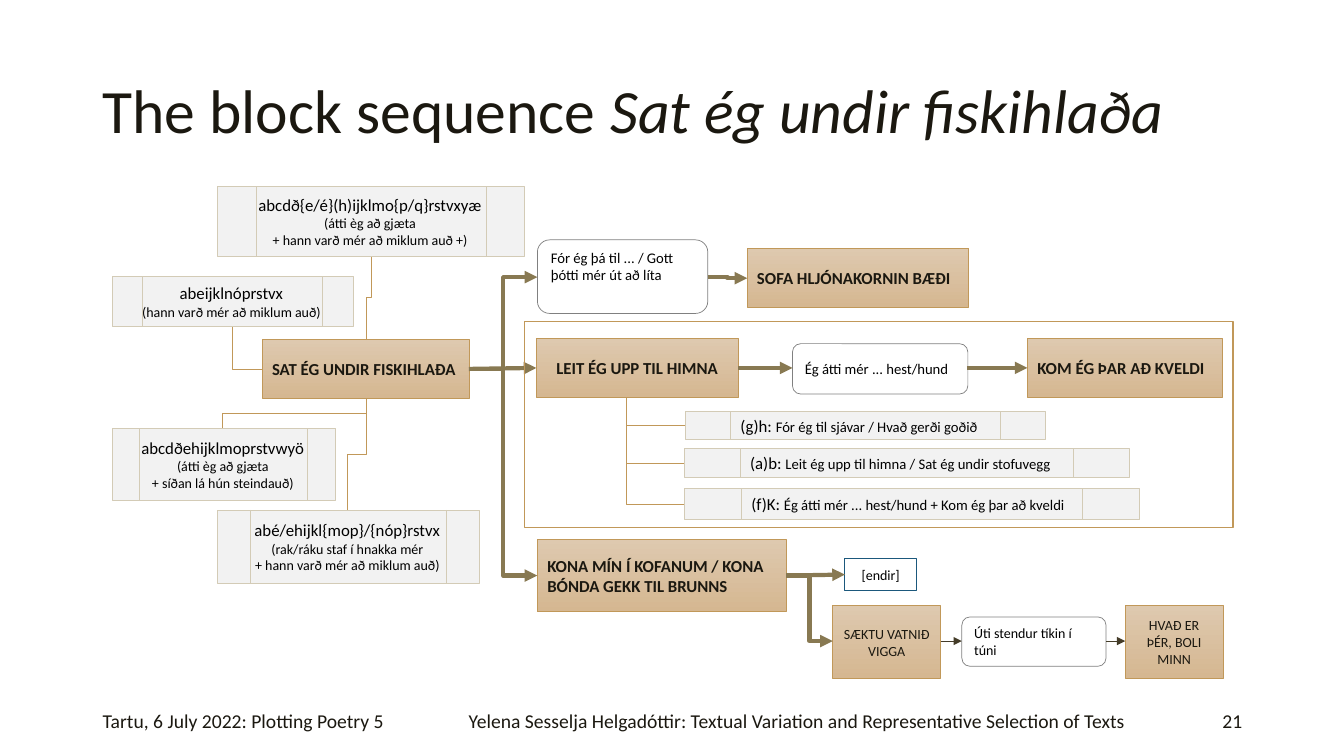
from lxml.etree import SubElement
from pptx import Presentation
from pptx.dml.color import RGBColor
from pptx.enum.shapes import MSO_CONNECTOR, MSO_SHAPE
from pptx.enum.text import MSO_ANCHOR, PP_ALIGN
from pptx.oxml.ns import qn
from pptx.util import Pt

PX = 9144  # 100 px to the inch
COLORS = {
    "ink": "1B1810", "black": "000000", "gold": "C19859", "arrow": "887952",
    "thin_arrow": "443C29", "sand": "D3CBB6", "grey": "808080", "pale": "F2F2F2",
    "blue": "1B587C", "block_top": "DEC9AF", "block_bottom": "D5B791",
}
LEFT, CENTER, RIGHT = PP_ALIGN.LEFT, PP_ALIGN.CENTER, PP_ALIGN.RIGHT
DEFAULT_MARGINS = (10, 5, 10, 5)


def color(name):
    return RGBColor.from_string(COLORS[name])


class Diagram:
    font_name = "Calibri"

    def __init__(self, slide):
        self.slide = slide

    def set_text(self, shape, paragraphs, ink="black", align=LEFT, bold=False,
                 anchor=MSO_ANCHOR.MIDDLE, margins=DEFAULT_MARGINS, spacing=None):
        """Each paragraph is a list of (text, size[, italic]) runs."""
        frame = shape.text_frame
        frame.word_wrap = True
        frame.vertical_anchor = anchor
        (frame.margin_left, frame.margin_top,
         frame.margin_right, frame.margin_bottom) = (m * PX for m in margins)
        for index, runs in enumerate(paragraphs):
            paragraph = frame.add_paragraph() if index else frame.paragraphs[0]
            paragraph.alignment = align
            if spacing:
                paragraph.line_spacing = spacing
            font = paragraph.font
            font.name, font.bold, font.size = self.font_name, bold, Pt(runs[0][1])
            font.color.rgb = color(ink)
            for text, size, *italic in runs:
                run = paragraph.add_run()
                run.text = text
                if size != runs[0][1]:
                    run.font.size = Pt(size)
                if italic:
                    run.font.italic = True

    def label(self, box, runs, **style):
        shape = self.slide.shapes.add_textbox(*(v * PX for v in box))
        self.set_text(shape, [runs], ink="ink", **style)

    def outline(self, kind, box, line, width=0.5):
        shape = self.slide.shapes.add_shape(kind, *(v * PX for v in box))
        shape.shadow.inherit = False
        shape.fill.background()
        shape.line.color.rgb = color(line)
        shape.line.width = Pt(width)
        return shape

    def block(self, box, text, size=12, bold=True, align=LEFT):
        shape = self.outline(MSO_SHAPE.RECTANGLE, box, "gold")
        shape.fill.gradient()
        shape.fill.gradient_angle = 270
        for stop, name in zip(shape.fill.gradient_stops, ("block_top", "block_bottom")):
            stop.color.rgb = color(name)
        self.set_text(shape, [[(text, size)]], ink="ink", bold=bold, align=align)

    def bridge(self, box, text, size=10.5, anchor=MSO_ANCHOR.MIDDLE):
        shape = self.outline(MSO_SHAPE.FLOWCHART_ALTERNATE_PROCESS, box, "grey")
        self.set_text(shape, [[(text, size)]], anchor=anchor)

    def variant(self, box, paragraphs, **style):
        shape = self.outline(MSO_SHAPE.FLOWCHART_PREDEFINED_PROCESS, box, "sand")
        shape.fill.solid()
        shape.fill.fore_color.rgb = color("pale")
        self.set_text(shape, paragraphs, **style)

    def connect(self, start, end, line="arrow", width=3, kind=MSO_CONNECTOR.STRAIGHT,
                arrow=True, bend=None):
        connector = self.slide.shapes.add_connector(
            kind, *(round(v * PX) for v in (*start, *end)))
        connector.line.color.rgb = color(line)
        connector.line.width = Pt(width)
        properties = connector._element.spPr
        if arrow:
            SubElement(properties.find(qn("a:ln")), qn("a:tailEnd"), type="triangle")
        if bend is not None:
            guides = properties.find(qn("a:prstGeom")).get_or_add_avLst()
            SubElement(guides, qn("a:gd"), name="adj1", fmla=f"val {bend}")
        SubElement(properties, qn("a:effectLst"))
        return connector

    def elbow(self, start, end):
        self.connect(start, end, kind=MSO_CONNECTOR.ELBOW, bend=50000)

    def corner(self, start, end):
        """Goes down first, then sideways."""
        self.connect(start, end, "gold", 0.5, MSO_CONNECTOR.ELBOW, False, 0)

    def drop(self, start, end):
        """Goes down, sideways and down again: an elbow turned by 90 degrees."""
        (x1, y1), (x2, y2) = start, end
        middle_x, middle_y = (x1 + x2) / 2, (y1 + y2) / 2
        half_width, half_height = (y2 - y1) / 2, (x1 - x2) / 2
        connector = self.connect(
            (middle_x - half_width, middle_y - half_height),
            (middle_x + half_width, middle_y + half_height),
            "gold", 0.5, MSO_CONNECTOR.ELBOW, False, 50000)
        connector._element.spPr.find(qn("a:xfrm")).set("rot", "5400000")


def main():
    presentation = Presentation()
    presentation.slide_width, presentation.slide_height = 1333 * PX, 750 * PX
    slide = presentation.slides.add_slide(presentation.slide_layouts[6])
    diagram = Diagram(slide)

    # Title and footer
    diagram.label((92, 40, 1150, 145), [("The block sequence ", 44),
                  ("Sat ég undir fiskihlaða", 44, True)], spacing=0.9)
    for left, width, text, align in (
            (92, 315, "Tartu, 6 July 2022: Plotting Poetry 5", LEFT),
            (392, 797, "Yelena Sesselja Helgadóttir: Textual Variation and "
             "Representative Selection of Texts", CENTER),
            (1189, 53, "21", RIGHT)):
        diagram.label((left, 695, width, 40), [(text, 14)], align=align)

    # Thin links to the variants
    diagram.drop((363, 395), (345, 506))
    diagram.drop((363, 395), (221, 425))
    diagram.drop((368, 254), (363, 337))
    diagram.corner((230, 324), (260, 366))
    for left, y in ((680, 422), (679, 460), (679, 500)):
        diagram.corner((621, 394), (left, y))

    # Blocks
    diagram.block((260, 337, 206, 58), "SAT ÉG UNDIR FISKIHLAÐA")
    diagram.block((741, 246, 220, 59), "SOFA HLJÓNAKORNIN BÆÐI")
    diagram.block((532, 336, 200, 58), "LEIT ÉG UPP TIL HIMNA", align=CENTER)
    diagram.block((1019, 336, 193, 58), "KOM ÉG ÞAR AÐ KVELDI")
    diagram.block((533, 535, 247, 72), "KONA MÍN Í KOFANUM / KONA BÓNDA GEKK TIL BRUNNS")
    diagram.block((826, 601, 107, 72), "SÆKTU VATNIÐ VIGGA", 10, False, CENTER)
    diagram.block((1116, 601, 97, 72), "HVAÐ ER ÞÉR, BOLI MINN", 10, False, CENTER)

    # Bridging lines and the ending
    diagram.bridge((533, 238, 169, 73), "Fór ég þá til ... / Gott þótti mér út að líta",
                   anchor=MSO_ANCHOR.TOP)
    diagram.bridge((786, 341, 174, 50), "Ég átti mér ... hest/hund")
    diagram.bridge((954, 612, 143, 49), "Úti stendur tíkin í túni", 10)
    ending = diagram.outline(MSO_SHAPE.RECTANGLE, (838, 554, 71, 32), "blue", 0.75)
    diagram.set_text(ending, [[("[endir]", 10)]], align=CENTER)

    # Variants of the opening block
    for box, sigla, *notes in (
            ((216, 185, 304, 69), "abcdð{e/é}(h)ijklmo{p/q}rstvxyæ",
             "(átti èg að gjæta", "+ hann varð mér að miklum auð +)"),
            ((111, 274, 239, 50), "abeijklnóprstvx", "(hann varð mér að miklum auð)"),
            ((111, 425, 222, 71), "abcdðehijklmoprstvwyö",
             "(átti èg að gjæta", "+ síðan lá hún steindauð)"),
            ((216, 506, 259, 73), "abé/ehijkl{mop}/{nóp}rstvx",
             "(rak/ráku staf í hnakka mér", "+ hann varð mér að miklum auð)")):
        diagram.variant(box, [[(sigla, 12)], *([(note, 10)] for note in notes)],
                        align=CENTER, margins=(0, 1, 2, 1))

    # Variants of the middle branch
    for box, sigla, text in (
            ((680, 408, 357, 28), "(g)h: ", "Fór ég til sjávar / Hvað gerði goðið"),
            ((679, 445, 441, 29), "(a)b: ", "Leit ég upp til himna / Sat ég undir stofuvegg"),
            ((679, 485, 451, 30), "(f)K: ", "Ég átti mér ... hest/hund + Kom ég þar að kveldi")):
        diagram.variant(box, [[(sigla, 12), (text, 10.5)]])

    # Arrows
    diagram.elbow((465, 366), (533, 275))
    diagram.elbow((465, 366), (533, 571))
    diagram.elbow((702, 275), (741, 276))
    diagram.elbow((780, 571), (826, 636))
    for start, end in (((465, 366), (532, 365)), ((732, 365), (786, 365)),
                       ((959, 365), (1019, 365)), ((780, 571), (838, 570))):
        diagram.connect(start, end)
    for left, right in ((933, 954), (1097, 1116)):
        diagram.connect((left, 636), (right, 636), "thin_arrow", 0.5)

    # Frame around the middle branch
    diagram.outline(MSO_SHAPE.RECTANGLE, (520, 319, 703, 204), "gold", 0.75)

    presentation.save("out.pptx")


if __name__ == "__main__":
    main()
